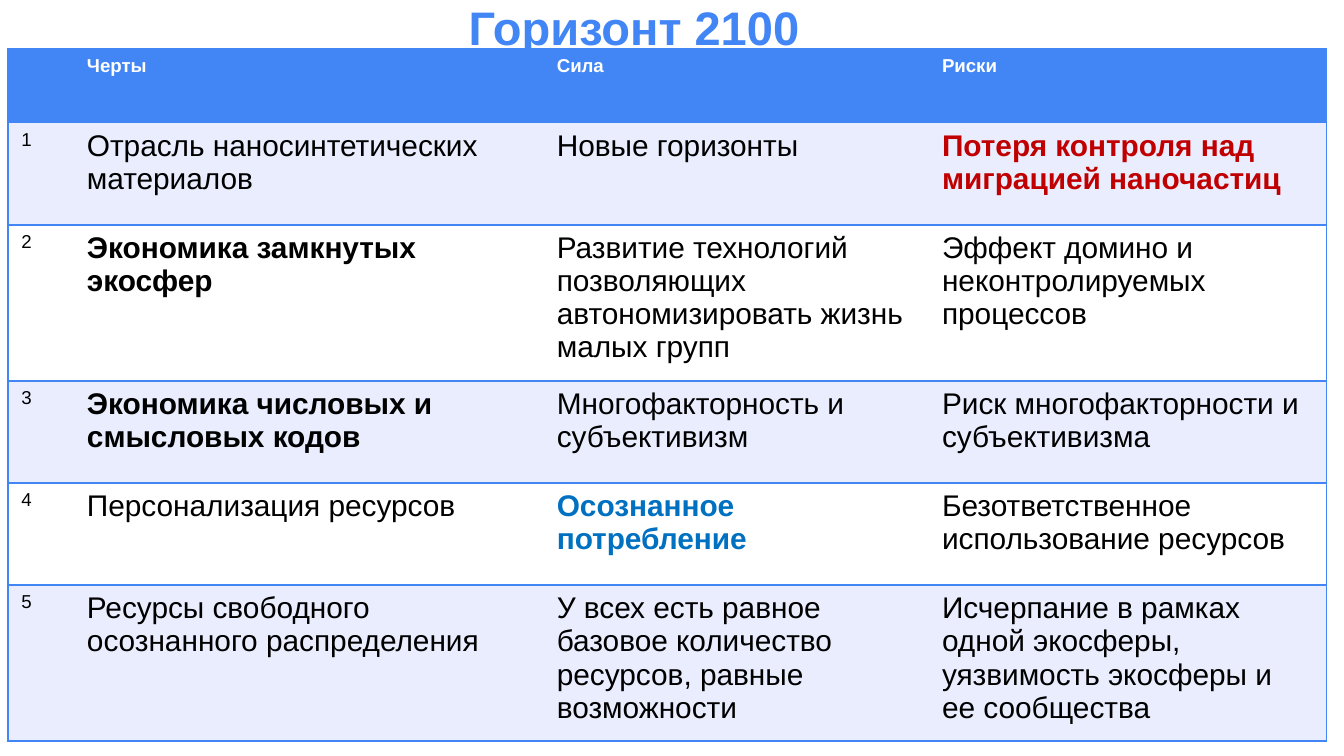
from dataclasses import dataclass

from lxml import etree
from pptx import Presentation
from pptx.dml.color import RGBColor
from pptx.enum import text
from pptx.oxml import ns
from pptx.util import Cm, Pt


@dataclass(frozen=True)
class Theme:
    font: str = "Arial"
    accent: str = "4285F4"
    band: str = "E9EDFD"
    paper: str = "FFFFFF"
    ink: str = "000000"
    risk: str = "C00000"
    strength: str = "0070C0"
    title_size: float = 25.2
    small_size: float = 10
    body_size: float = 16
    border_width: float = 1


THEME = Theme()
TITLE = "Горизонт 2100"
HEADINGS = ["", "Черты", "Сила", "Риски"]
TRENDS = [
    ("Отрасль наносинтетических материалов", "Новые горизонты",
     "Потеря контроля над миграцией наночастиц"),
    ("Экономика замкнутых экосфер",
     "Развитие технологий позволяющих автономизировать жизнь малых групп",
     "Эффект домино и неконтролируемых процессов"),
    ("Экономика числовых и смысловых кодов", "Многофакторность и субъективизм",
     "Риск многофакторности и субъективизма"),
    ("Персонализация ресурсов", "Осознанное потребление",
     "Безответственное использование ресурсов"),
    ("Ресурсы свободного осознанного распределения",
     "У всех есть равное базовое количество ресурсов, равные возможности",
     "Исчерпание в рамках одной экосферы, уязвимость экосферы и ее сообщества"),
]
EMPHASIS = {(1, 3): THEME.risk, (2, 1): THEME.ink,
            (3, 1): THEME.ink, (4, 2): THEME.strength}
COLUMN_WIDTHS = [1.24, 8.88, 7.28, 7.52]
ROW_HEIGHTS = [1.4, 1.93, 2.95, 1.93, 1.93, 2.95]


def style_text(paragraph, size, color, bold):
    for run in paragraph.runs:
        run.font.name = THEME.font
        run.font.size = Pt(size)
        run.font.bold = bold
        run.font.color.rgb = RGBColor.from_string(color)


def add_title(slide):
    title = slide.shapes.add_textbox(Cm(0.15), Cm(-0.36), Cm(23.67), Cm(0.71))
    frame = title.text_frame
    frame.word_wrap = True
    frame.vertical_anchor = text.MSO_ANCHOR.TOP
    frame.margin_top, frame.margin_bottom = Cm(0.33), Cm(0)
    frame.text = TITLE
    heading = frame.paragraphs[0]
    heading.alignment = text.PP_ALIGN.CENTER
    style_text(heading, THEME.title_size, THEME.accent, True)


def set_borders(cell, visible_sides):
    properties = cell._tc.get_or_add_tcPr()
    for side in "LRTB":
        line = etree.SubElement(properties, ns.qn(f"a:ln{side}"),
                                w=str(Pt(THEME.border_width)))
        if side in visible_sides:
            fill = etree.SubElement(line, ns.qn("a:solidFill"))
            etree.SubElement(fill, ns.qn("a:srgbClr"), val=THEME.accent)
        else:
            etree.SubElement(line, ns.qn("a:noFill"))


def fill_cell(cell, row, column, wording):
    sides = "TB" + {0: "L", len(HEADINGS) - 1: "R"}.get(column, "")
    set_borders(cell, sides)
    background = THEME.band if row % 2 else THEME.paper
    cell.fill.solid()
    cell.fill.fore_color.rgb = RGBColor.from_string(
        background if row else THEME.accent)
    cell.text = wording
    is_small = row == 0 or column == 0
    color = EMPHASIS.get((row, column), THEME.ink if row else THEME.paper)
    style_text(cell.text_frame.paragraphs[0],
               THEME.small_size if is_small else THEME.body_size,
               color, row == 0 or (row, column) in EMPHASIS)


def add_trend_table(slide):
    rows = [HEADINGS] + [[str(number), *trend]
                         for number, trend in enumerate(TRENDS, 1)]
    table = slide.shapes.add_table(
        len(rows), len(HEADINGS), Cm(0.15), Cm(0.92),
        Cm(sum(COLUMN_WIDTHS)), Cm(sum(ROW_HEIGHTS))).table
    for column, width in zip(table.columns, COLUMN_WIDTHS):
        column.width = Cm(width)
    for row, height in zip(table.rows, ROW_HEIGHTS):
        row.height = Cm(height)
    for row, wordings in enumerate(rows):
        for column, wording in enumerate(wordings):
            fill_cell(table.cell(row, column), row, column, wording)


def main():
    presentation = Presentation()
    presentation.slide_width, presentation.slide_height = Cm(25.4), Cm(14.29)
    slide = presentation.slides.add_slide(presentation.slide_layouts[6])
    add_trend_table(slide)
    add_title(slide)
    presentation.save("out.pptx")


if __name__ == "__main__":
    main()
